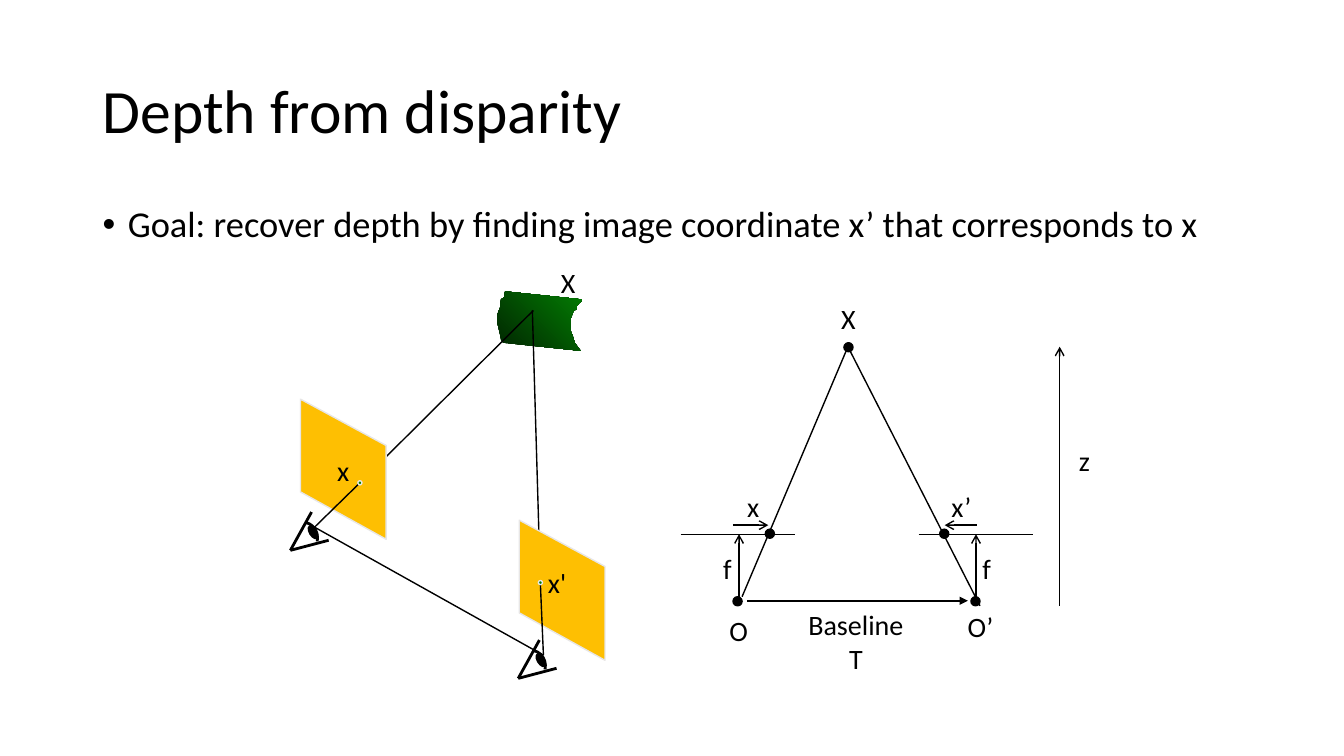
from lxml import etree
from pptx import Presentation
from pptx import util as u
from pptx.dml.color import RGBColor
from pptx.enum import shapes, text
from pptx.oxml import ns

PX = 9144  # one px is a hundredth of an inch
BLACK = RGBColor(0x00, 0x00, 0x00)
AMBER = RGBColor(0xFE, 0xBF, 0x02)
PALE_GREY = RGBColor(0xE7, 0xE6, 0xE6)
GREEN = RGBColor(0x03, 0x7C, 0x03)
DARK_GREEN = RGBColor(0x01, 0x25, 0x01)

deck = Presentation()
deck.slide_width, deck.slide_height = 1333 * PX, 750 * PX
page = deck.slides.add_slide(deck.slide_layouts[6])


def add_text(words, box, size=20, align=text.PP_ALIGN.CENTER,
             anchor=text.MSO_ANCHOR.MIDDLE):
    frame = page.shapes.add_textbox(*[side * PX for side in box]).text_frame
    frame.word_wrap = True
    frame.vertical_anchor = anchor
    para = frame.paragraphs[0]
    para.text = words
    para.alignment = align
    para.font.name = "Calibri"
    para.font.size = u.Pt(size)
    para.font.color.rgb = BLACK
    return para


def add_line(start, end, width=1, arrow=None):
    """Draw a black line; arrow is the kind of arrowhead at its end."""
    line = page.shapes.add_connector(
        shapes.MSO_CONNECTOR.STRAIGHT, *[place * PX for place in start + end])
    line.line.color.rgb = BLACK
    line.line.width = u.Pt(width)
    properties = line.element.spPr
    if arrow:
        outline = properties.find(ns.qn("a:ln"))
        etree.SubElement(outline, ns.qn("a:tailEnd"), type=arrow)
    etree.SubElement(properties, ns.qn("a:effectLst"))


# Title and goal
title = add_text("Depth from disparity", (92, 40, 1150, 145), 44,
                 text.PP_ALIGN.LEFT)
goal = add_text(
    "Goal: recover depth by finding image coordinate x’ that corresponds to x",
    (92, 200, 1150, 476), 26, text.PP_ALIGN.LEFT, text.MSO_ANCHOR.TOP)
title.line_spacing = goal.line_spacing = 0.9
goal.space_before = u.Pt(10)
goal_format = goal._p.get_or_add_pPr()
goal_format.set("marL", str(25 * PX))
goal_format.set("indent", str(-25 * PX))
bullet_font = etree.Element(ns.qn("a:buFont"), typeface="Arial")
bullet = etree.Element(ns.qn("a:buChar"), char="•")
default_font = goal_format.find(ns.qn("a:defRPr"))
default_font.addprevious(bullet_font)
default_font.addprevious(bullet)

# Triangulation diagram: lines
for start, end in [
    ((675, 530), (789, 530)),  # left image line
    ((911, 530), (1025, 530)),  # right image line
    ((736, 592), (841, 344)),  # left ray
    ((972, 601), (841, 344)),  # right ray
]:
    add_line(start, end)
for start, end in [
    ((733, 592), (733, 530)),  # left focal length
    ((968, 592), (968, 530)),  # right focal length
    ((727, 521), (762, 521)),  # x
    ((969, 521), (937, 521)),  # x’
    ((1051, 601), (1051, 344)),  # depth
]:
    add_line(start, end, arrow="arrow")
add_line((741, 596), (960, 596), 1.5, "triangle")

# Triangulation diagram: points
DOT = 9
for left, top in [(727, 592), (963, 592), (837, 340), (759, 525), (932, 525)]:
    dot = page.shapes.add_shape(shapes.MSO_SHAPE.OVAL, left * PX, top * PX,
                                DOT * PX, DOT * PX)
    dot.shadow.inherit = False
    dot.fill.solid()
    dot.fill.fore_color.rgb = dot.line.color.rgb = BLACK
    dot.line.width = u.Pt(1)

# Scene: curved surface
surface_outline = [
    (501, 289), (500, 295), (497, 297), (496, 305), (493, 313), (493, 319),
    (496, 332), (497, 337), (499, 340), (576, 348), (570, 340), (568, 333),
    (566, 328), (566, 316), (568, 311), (569, 308), (572, 307), (572, 304),
    (574, 301), (576, 300), (577, 297),
]
builder = page.shapes.build_freeform(*surface_outline[0], scale=PX)
builder.add_line_segments(surface_outline[1:])
surface = builder.convert_to_shape()
surface.shadow.inherit = False
surface.line.fill.background()
surface.fill.gradient()
surface.fill.gradient_angle = 45
for stop, color in zip(surface.fill.gradient_stops, (DARK_GREEN, GREEN)):
    stop.color.rgb = color

# Scene: baseline and the rays that pass behind the image planes
add_line((312, 523), (539, 650))
add_line((357, 479), (529, 308))
add_line((536, 580), (528, 308))

# Scene: image planes
for right, down in [(0, 0), (217, 120)]:
    corners = [(298 + right, 488 + down), (383 + right, 535 + down),
               (383 + right, 442 + down), (298 + right, 396 + down)]
    builder = page.shapes.build_freeform(*corners[0], scale=PX)
    builder.add_line_segments(corners[1:])
    plane = builder.convert_to_shape()
    plane.shadow.inherit = False
    plane.fill.solid()
    plane.fill.fore_color.rgb = AMBER
    plane.line.color.rgb = PALE_GREY
    plane.line.width = u.Pt(1)

# Scene: rays in front of the planes
add_line((312, 523), (357, 479))
add_line((539, 650), (536, 580))

# Scene: eyes
for right, down in [(0, 0), (226, 127)]:
    eyeball = page.shapes.add_shape(
        shapes.MSO_SHAPE.ARC, (285 + right) * PX, (518 + down) * PX,
        30 * PX, 32 * PX)
    eyeball.rotation = 12
    eyeball.fill.background()
    eyeball.line.width = u.Pt(2)
    pupil = page.shapes.add_shape(
        shapes.MSO_SHAPE.OVAL, (307 + right) * PX, (521 + down) * PX,
        7 * PX, 14 * PX)
    pupil.rotation = 329
    pupil.fill.solid()
    pupil.fill.fore_color.rgb = BLACK
    pupil.line.width = u.Pt(1)
    for part in (eyeball, pupil):
        part.shadow.inherit = False
        part.line.color.rgb = BLACK
    corner = (288 + right, 546 + down)
    add_line((309 + right, 508 + down), corner, 2)
    add_line(corner, (326 + right, 536 + down), 2)

# Scene: image points
for left, top in [(534, 576), (355, 477)]:
    point = page.shapes.add_shape(shapes.MSO_SHAPE.OVAL, left * PX, top * PX,
                                  4 * PX, 4 * PX)
    point.shadow.inherit = False
    point.fill.solid()
    point.fill.fore_color.rgb = GREEN
    point.line.color.rgb = PALE_GREY
    point.line.width = u.Pt(1)

# Labels
for words, left, top, width in [
    ("f", 707, 542, 29), ("f", 964, 542, 29),
    ("x", 731, 480, 32), ("x’", 933, 480, 41),
    ("z", 1060, 435, 31), ("X", 797, 294, 89),
    ("O", 688, 603, 89), ("O’", 928, 599, 89),
    ("X", 531, 258, 65), ("x", 308, 445, 65), ("x'", 520, 556, 65),
]:
    add_text(words, (left, top, width, 44))
add_text("Baseline\nT", (791, 598, 116, 77))

deck.save("out.pptx")
